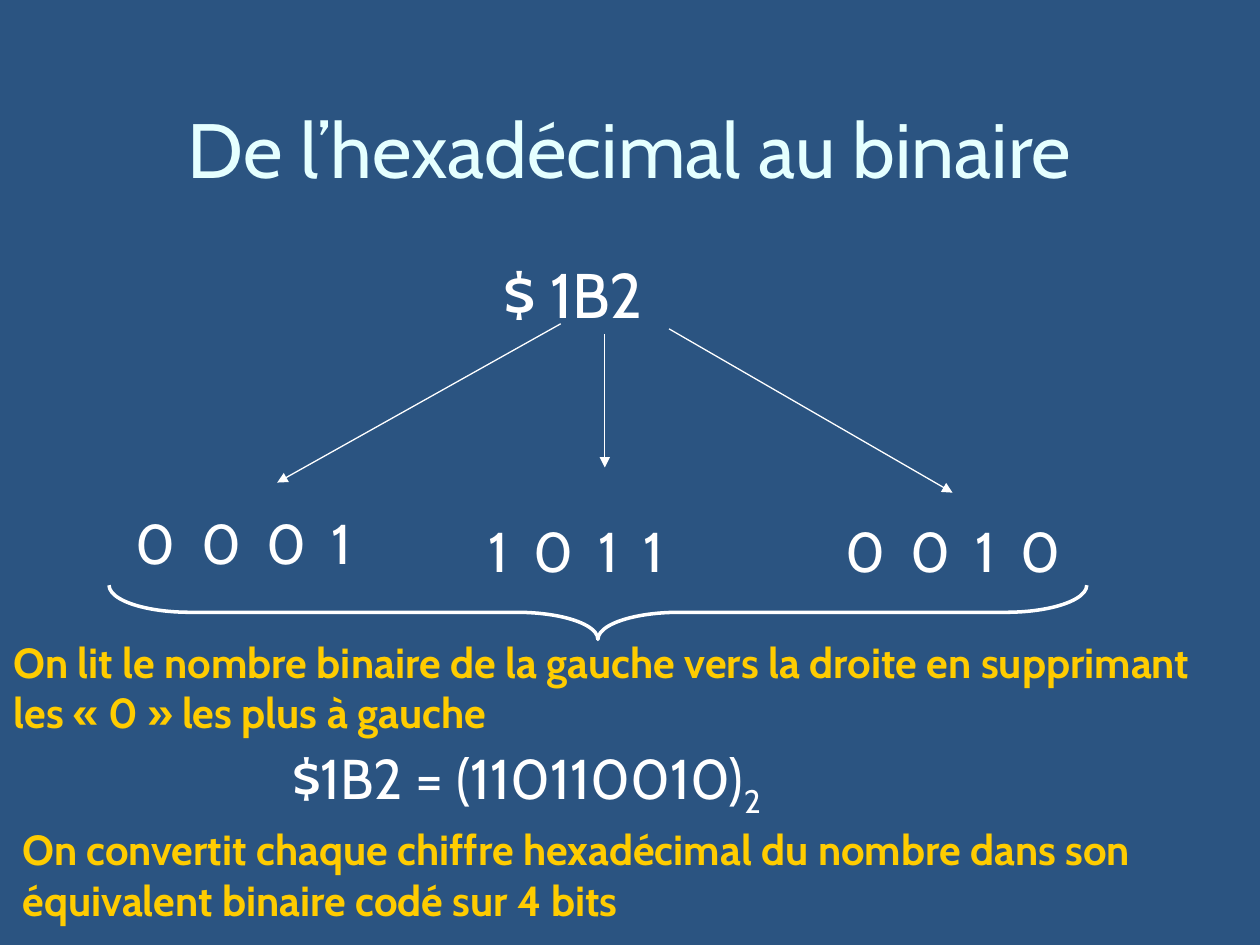
from lxml import etree
from pptx import Presentation
from pptx.dml.color import RGBColor
from pptx.enum.shapes import MSO_CONNECTOR, MSO_SHAPE
from pptx.enum.text import MSO_ANCHOR, MSO_AUTO_SIZE, PP_ALIGN
from pptx.oxml.ns import qn
from pptx.util import Inches, Pt

STRAIGHT = MSO_CONNECTOR.STRAIGHT
RIGHT_BRACE = MSO_SHAPE.RIGHT_BRACE
MIDDLE, TOP = MSO_ANCHOR.MIDDLE, MSO_ANCHOR.TOP
CENTER, LEFT = PP_ALIGN.CENTER, PP_ALIGN.LEFT
GROW, FIXED = MSO_AUTO_SIZE.SHAPE_TO_FIT_TEXT, MSO_AUTO_SIZE.NONE
COLUMNS, ROWS = 100, 75


def color(value):
    return RGBColor.from_string(value)


class SlideBuilder:
    font = "Cabin"
    background = "2B5481"
    title_color = "E5FFFF"
    ink = "FFFFFF"
    accent = "FFCC00"

    def __init__(self, deck):
        self.column = deck.slide_width / COLUMNS
        self.row = deck.slide_height / ROWS
        self.page = deck.slides.add_slide(deck.slide_layouts[6])
        fill = self.page.background.fill
        fill.solid()
        fill.fore_color.rgb = color(self.background)

    def place(self, left, top, width, height):
        return (round(left * self.column), round(top * self.row),
                round(width * self.column), round(height * self.row))

    def text(self, area, runs, size, ink=None, bold=False, wrap=True,
             align=LEFT, anchor=TOP, fit=GROW, tracking=0):
        box = self.page.shapes.add_textbox(*self.place(*area))
        frame = box.text_frame
        frame.word_wrap = wrap
        frame.auto_size = fit
        frame.vertical_anchor = anchor
        para = frame.paragraphs[0]
        para.alignment = align
        for words, baseline in runs:
            span = para.add_run()
            span.text = words
            span.font.name = self.font
            span.font.size = Pt(size)
            span.font.bold = bold
            span.font.color.rgb = color(ink or self.ink)
            properties = span._r.get_or_add_rPr()
            if baseline:
                properties.set("baseline", str(baseline * 1000))
            if tracking:
                properties.set("spc", str(round(tracking * 100)))

    def title(self, area, words):
        self.text(area, [(words, 0)], 44, self.title_color,
                  align=CENTER, anchor=MIDDLE, fit=FIXED)

    def rule(self, area, words):
        self.text(area, [(words, 0)], 24, self.accent, bold=True)

    def bits(self, area, digits):
        self.text(area, [(" ".join(digits), 0)], 32, wrap=False, tracking=3.6)

    def arrow(self, start, end):
        x1, y1, x2, y2 = self.place(*start, *end)
        arrow = self.page.shapes.add_connector(STRAIGHT, x1, y1, x2, y2)
        arrow.line.color.rgb = color(self.ink)
        arrow.line.width = Pt(0.75)
        line = arrow.line._get_or_add_ln()
        etree.SubElement(line, qn("a:tailEnd"), type="triangle")
        etree.SubElement(arrow._element.spPr, qn("a:effectLst"))

    def brace(self, area):
        brace = self.page.shapes.add_shape(RIGHT_BRACE, *self.place(*area))
        brace.rotation = 90
        brace.adjustments[0] = 1.495
        brace.adjustments[1] = 0.5
        brace.shadow.inherit = False
        brace.fill.background()
        brace.line.color.rgb = color(self.ink)
        brace.line.width = Pt(2)


def main():
    deck = Presentation()
    deck.slide_width, deck.slide_height = Inches(10), Inches(7.5)
    slide = SlideBuilder(deck)

    slide.title((5, 4.2, 90, 15), "De l’hexadécimal au binaire")
    slide.text((39, 19.8, 17.8, 7), [("$ 1B2", 0)], 36, wrap=False)

    for start, end in (((44.5, 25.7), (22, 38.3)),
                       ((53.1, 26.1), (75.6, 39.1)),
                       ((48, 26.5), (48, 37.1))):
        slide.arrow(start, end)

    for left, top, digits in ((9.8, 39.9, "0001"),
                              (37.8, 40.5, "1011"),
                              (66.1, 40.5, "0010")):
        slide.bits((left, top, 20.1, 6.3), digits)

    slide.text((22.2, 58.5, 52.6, 6.3),
               [("$1B2 = (110110010)", 0), ("2", -25)], 32)
    slide.brace((45.3, 9.8, 4.3, 77.6))
    slide.rule((0.8, 64.9, 97.6, 9.1),
               "On convertit chaque chiffre hexadécimal du nombre dans son "
               "équivalent binaire codé sur 4 bits")
    slide.rule((0.1, 50, 98.4, 9.1),
               "On lit le nombre binaire de la gauche vers la droite en "
               "supprimant les « 0 » les plus à gauche")
    deck.save("out.pptx")


if __name__ == "__main__":
    main()
